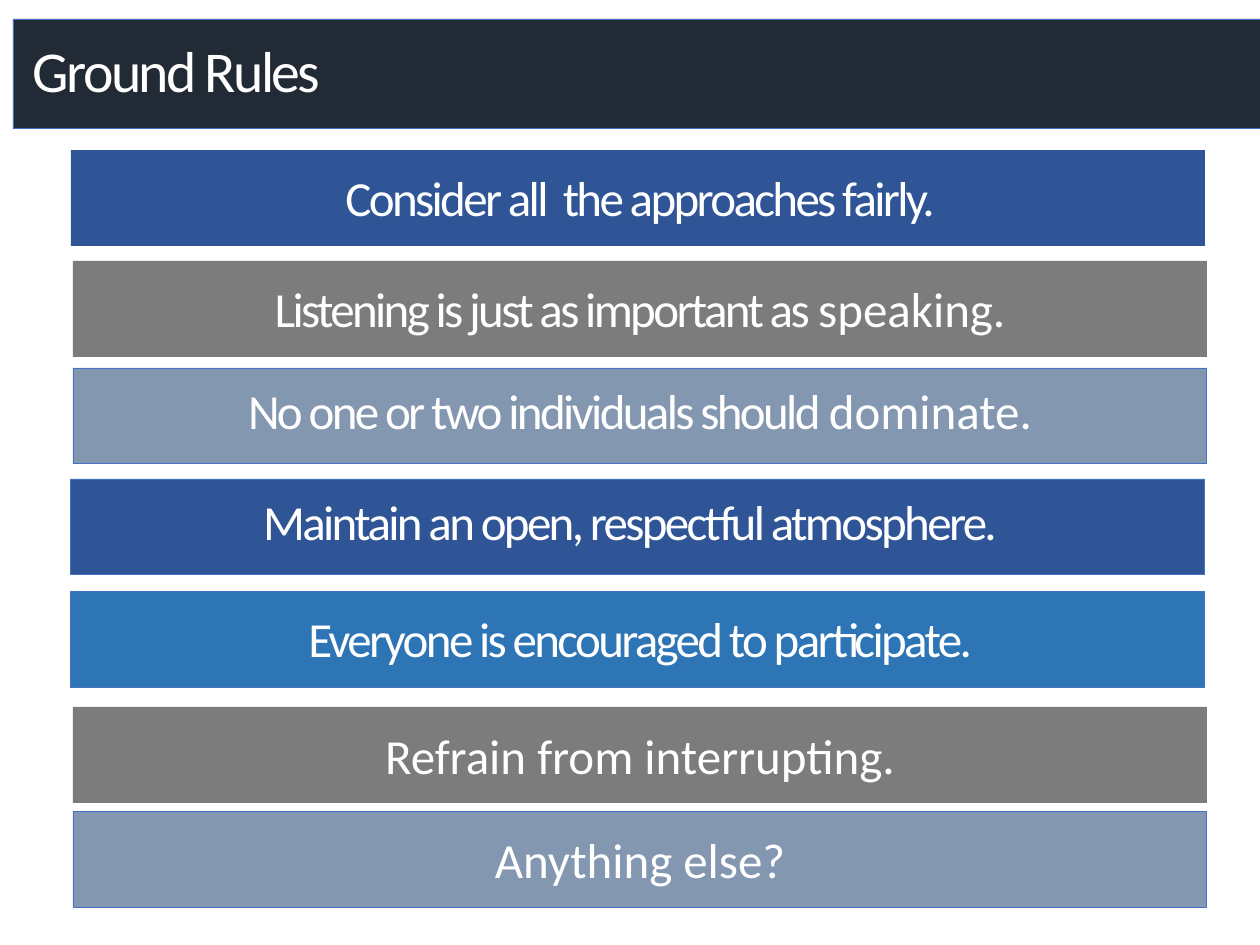
"""Build the Ground Rules slide: a title band above seven coloured rule bars."""
import pptx
import pptx.dml.color
import pptx.enum.shapes
import pptx.enum.text
import pptx.util

EMU_PER_PX = 914400 / 126
BAR_WIDTH, BAR_HEIGHT, TEXT_HEIGHT = 1134, 96, 72
NAVY, BLUE, GRAY, SLATE = "2F5597", "2E75B6", "7C7C7C", "8497B0"
OUTLINE = "4472C4"


def add_box(left, top, width, height, fill=None, line=None):
    box = [pptx.util.Emu(round(px * EMU_PER_PX)) for px in (left, top, width, height)]
    if fill is None:
        shape = slide.shapes.add_textbox(*box)
        shape.text_frame.word_wrap = True
        return shape
    shape = slide.shapes.add_shape(pptx.enum.shapes.MSO_SHAPE.RECTANGLE, *box)
    shape.shadow.inherit = False
    shape.fill.solid()
    shape.fill.fore_color.rgb = pptx.dml.color.RGBColor.from_string(fill)
    if line:
        shape.line.color.rgb = pptx.dml.color.RGBColor.from_string(line)
        shape.line.width = pptx.util.Pt(0.5)
    else:
        shape.line.fill.background()
    return shape


def add_run(paragraph, text, size, spacing):
    run = paragraph.add_run()
    run.text = text
    run.font.name = "Calibri"
    run.font.size = pptx.util.Pt(size)
    run.font.color.rgb = pptx.dml.color.RGBColor.from_string("FFFFFF")
    if spacing:
        run._r.get_or_add_rPr().set("spc", str(spacing))


presentation = pptx.Presentation()
presentation.slide_width = pptx.util.Inches(10)
presentation.slide_height = pptx.util.Inches(7.5)
slide = presentation.slides.add_slide(presentation.slide_layouts[6])

add_box(13, 19, 1260, 110, "222A35", OUTLINE)
title = add_box(0, -5, 1260, 158)
title.text_frame.margin_left = pptx.util.Emu(round(33 * EMU_PER_PX))
title.text_frame.vertical_anchor = pptx.enum.text.MSO_ANCHOR.MIDDLE
title_paragraph = title.text_frame.paragraphs[0]
title_paragraph.line_spacing = 0.9
add_run(title_paragraph, "Ground Rules", 33, -150)

# left, top, fill, outline, text left, text top, tight text, normal text
rules = [
    (71, 150, NAVY, None, 73, 161, "Consider all  the approaches fairly.", ""),
    (73, 261, GRAY, None, 73, 272, "Listening is just as important as ", "speaking."),
    (73, 368, SLATE, OUTLINE, 73, 374, "No one or two individuals should ", "dominate."),
    (71, 479, NAVY, OUTLINE, 63, 485, "Maintain an open, respectful atmosphere.", ""),
    (71, 591, BLUE, OUTLINE, 73, 602, "Everyone is encouraged to participate.", ""),
    (73, 707, GRAY, None, None, None, "", "Refrain from interrupting."),
    (73, 811, SLATE, OUTLINE, None, None, "", "Anything else?"),
]
for left, top, fill, outline, text_left, text_top, tight_text, normal_text in rules:
    shape = add_box(left, top, BAR_WIDTH, BAR_HEIGHT, fill, outline)
    if text_top is not None:
        shape = add_box(text_left, text_top, BAR_WIDTH, TEXT_HEIGHT)
    paragraph = shape.text_frame.paragraphs[0]
    paragraph.alignment = pptx.enum.text.PP_ALIGN.CENTER
    for text, spacing in ((tight_text, -150), (normal_text, 0)):
        if text:
            add_run(paragraph, text, 28, spacing)

presentation.save("out.pptx")
